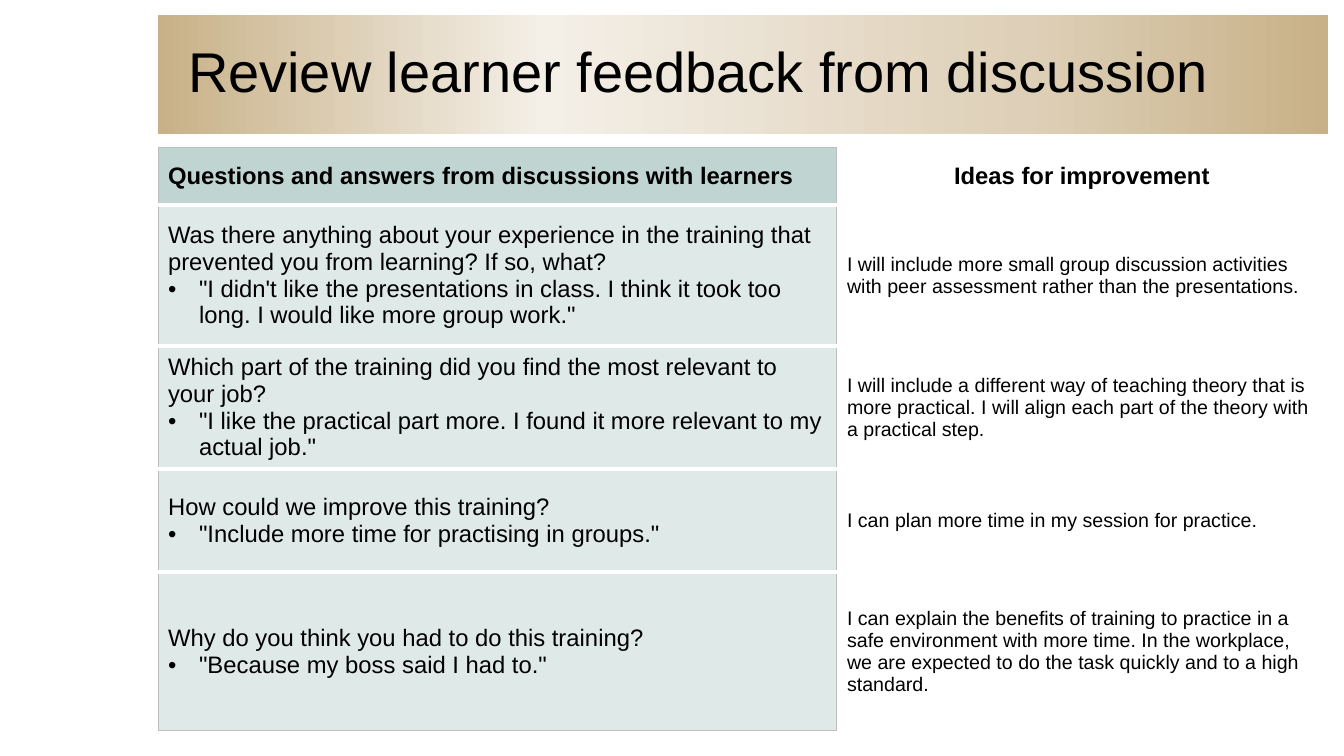
import copy
from dataclasses import dataclass

import pptx
import pptx.dml.color
import pptx.enum.text
import pptx.oxml
import pptx.oxml.ns
import pptx.util
from lxml import etree

EMU_PER_PX = 914400 / 100.8
NO_STYLE = "{2D5ABB26-0587-4C30-8999-92F81FD0307C}"
LEFT = pptx.enum.text.PP_ALIGN.LEFT
CENTER = pptx.enum.text.PP_ALIGN.CENTER
MIDDLE = pptx.enum.text.MSO_ANCHOR.MIDDLE
qn = pptx.oxml.ns.qn


@dataclass(frozen=True)
class Theme:
    font: str = "Arial"
    text: str = "000000"
    header: str = "C0D4D1"
    body: str = "DFE9E8"
    frame: tuple = ("BFBFBF", 0.75)
    divider: tuple = ("FFFFFF", 3)
    title_stops: tuple = ((0, "C8B188"), (0.33, "F4EFE7"), (0.74, "DED0B8"), (1, "C8B188"))
    title_size: int = 40
    question_size: int = 17
    idea_size: int = 14


HEADINGS = ("Questions and answers from discussions with learners", "Ideas for improvement")
FEEDBACK = (
    ("Was there anything about your experience in the training that prevented you "
     "from learning? If so, what?",
     "\"I didn't like the presentations in class. I think it took too long. "
     "I would like more group work.\"",
     "I will include more small group discussion activities with peer assessment "
     "rather than the presentations."),
    ("Which part of the training did you find the most relevant to your job?",
     "\"I like the practical part more. I found it more relevant to my actual job.\"",
     "I will include a different way of teaching theory that is more practical. "
     "I will align each part of the theory with a practical step."),
    ("How could we improve this training?",
     "\"Include more time for practising in groups.\"",
     "I can plan more time in my session for practice."),
    ("Why do you think you had to do this training?",
     "\"Because my boss said I had to.\"",
     "I can explain the benefits of training to practice in a safe environment with "
     "more time. In the workplace, we are expected to do the task quickly and to a "
     "high standard."),
)
COLUMN_WIDTHS = (679, 490)
ROW_HEIGHTS = (58, 141, 123, 103, 159)


def px(length):
    return pptx.util.Emu(round(length * EMU_PER_PX))


def rgb(color):
    return pptx.dml.color.RGBColor.from_string(color)


class FeedbackPage:
    def __init__(self, page, theme):
        self.page = page
        self.theme = theme

    def add_span(self, para, text, size, bold=False, align=LEFT):
        para.alignment = align
        span = para.add_run()
        span.text = text
        span.font.name = self.theme.font
        span.font.size = pptx.util.Pt(size)
        span.font.bold = bold
        span.font.color.rgb = rgb(self.theme.text)

    def indent(self, para, margin, first=0, bullet=None):
        properties = para._p.get_or_add_pPr()
        properties.set("marL", str(px(margin)))
        properties.set("indent", str(px(first)))
        if bullet:
            etree.SubElement(properties, qn("a:buFont"), typeface=self.theme.font)
            etree.SubElement(properties, qn("a:buChar"), char=bullet)

    def title(self, text, left, top, width, height):
        box = self.page.shapes.title
        box.left, box.top, box.width, box.height = map(px, (left, top, width, height))
        box.fill.gradient()
        box.fill.gradient_angle = 0
        stop_list = box._element.spPr.find(".//" + qn("a:gsLst"))
        while len(stop_list) < len(self.theme.title_stops):
            stop_list.append(copy.deepcopy(stop_list[0]))
        for stop, (position, color) in zip(box.fill.gradient_stops, self.theme.title_stops):
            stop.position = position
            stop.color.rgb = rgb(color)
        frame = box.text_frame
        frame.word_wrap = True
        frame.auto_size = pptx.enum.text.MSO_AUTO_SIZE.NONE
        frame.vertical_anchor = MIDDLE
        para = frame.paragraphs[0]
        self.indent(para, 20)
        para.line_spacing = 0.9
        para.space_before = pptx.util.Pt(0)
        self.add_span(para, text, self.theme.title_size)

    def table(self, left, top, widths, heights):
        area = map(px, (left, top, sum(widths), sum(heights)))
        table = self.page.shapes.add_table(len(heights), len(widths), *area).table
        table.first_row = table.horz_banding = False
        table._tbl.tblPr.find(qn("a:tableStyleId")).text = NO_STYLE
        for column, width in zip(table.columns, widths):
            column.width = px(width)
        for row, height in zip(table.rows, heights):
            row.height = px(height)
        return table

    def style_cell(self, cell, fill=None, **borders):
        """Apply borders, given as L, R, T or B, before the fill that must follow them."""
        cell.vertical_anchor = MIDDLE
        properties = cell._tc.get_or_add_tcPr()
        for side in "LRTB":
            if side in borders:
                color, points = borders[side]
                line = etree.SubElement(properties, qn("a:ln" + side),
                                        w=str(pptx.util.Pt(points)))
                solid = etree.SubElement(line, qn("a:solidFill"))
                etree.SubElement(solid, qn("a:srgbClr"), val=color)
        if fill:
            cell.fill.solid()
            cell.fill.fore_color.rgb = rgb(fill)
        else:
            cell.fill.background()

    def feedback_table(self, left, top):
        theme = self.theme
        table = self.table(left, top, COLUMN_WIDTHS, ROW_HEIGHTS)
        last = len(ROW_HEIGHTS) - 1
        for row in range(last + 1):
            self.style_cell(table.cell(row, 0), theme.body if row else theme.header,
                            L=theme.frame, R=theme.frame,
                            T=theme.divider if row else theme.frame,
                            B=theme.divider if row < last else theme.frame)
            self.style_cell(table.cell(row, 1), L=theme.frame)
        for column, (heading, align) in enumerate(zip(HEADINGS, (LEFT, CENTER))):
            para = table.cell(0, column).text_frame.paragraphs[0]
            self.add_span(para, heading, theme.question_size, True, align)
        for row, (question, answer, idea) in enumerate(FEEDBACK, 1):
            frame = table.cell(row, 0).text_frame
            self.add_span(frame.paragraphs[0], question, theme.question_size)
            quote = frame.add_paragraph()
            self.indent(quote, 31, -31, "•")
            self.add_span(quote, answer, theme.question_size)
            self.add_span(table.cell(row, 1).text_frame.paragraphs[0], idea, theme.idea_size)


def main():
    deck = pptx.Presentation()
    deck.slide_width, deck.slide_height = px(1344), px(756)
    title_only = deck.slide_layouts[5]
    page = FeedbackPage(deck.slides.add_slide(title_only), Theme())
    page.title("Review learner feedback from discussion", 158, 15, 1170, 119)
    page.feedback_table(158, 147)
    deck.save("out.pptx")


if __name__ == "__main__":
    main()
